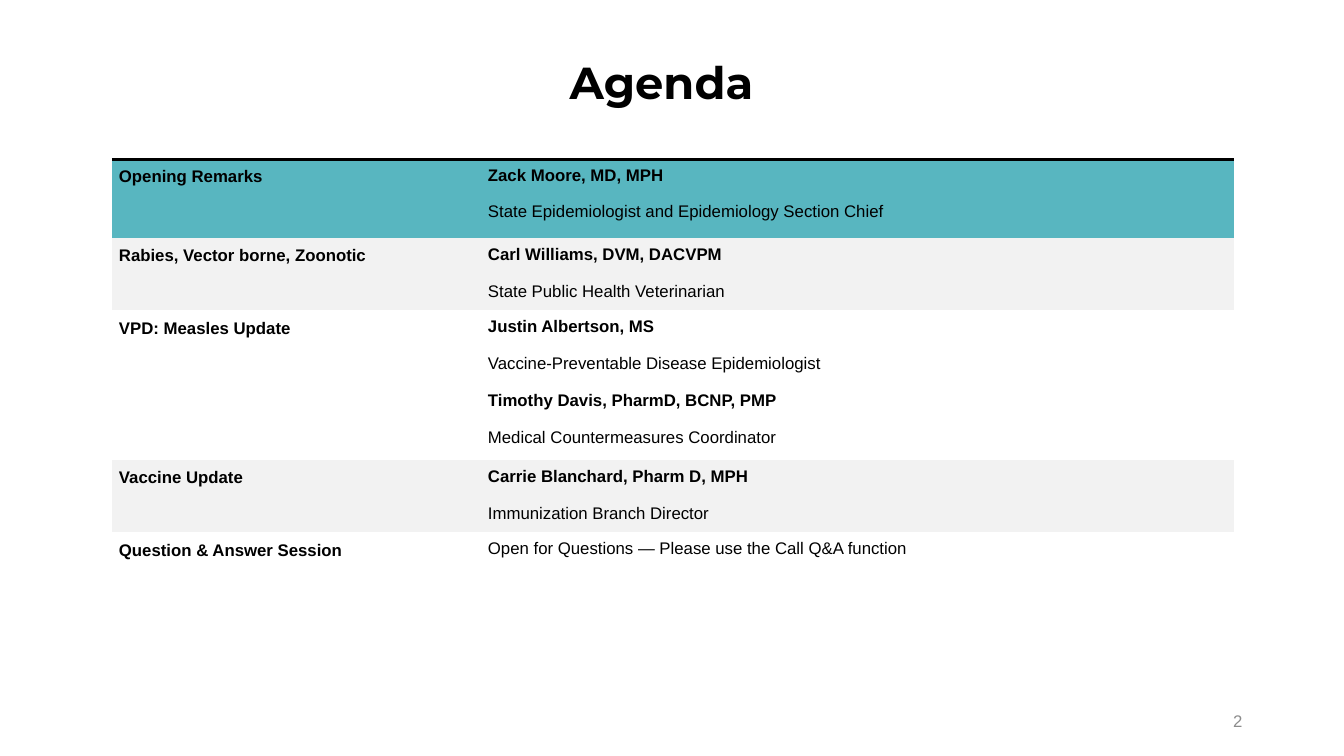
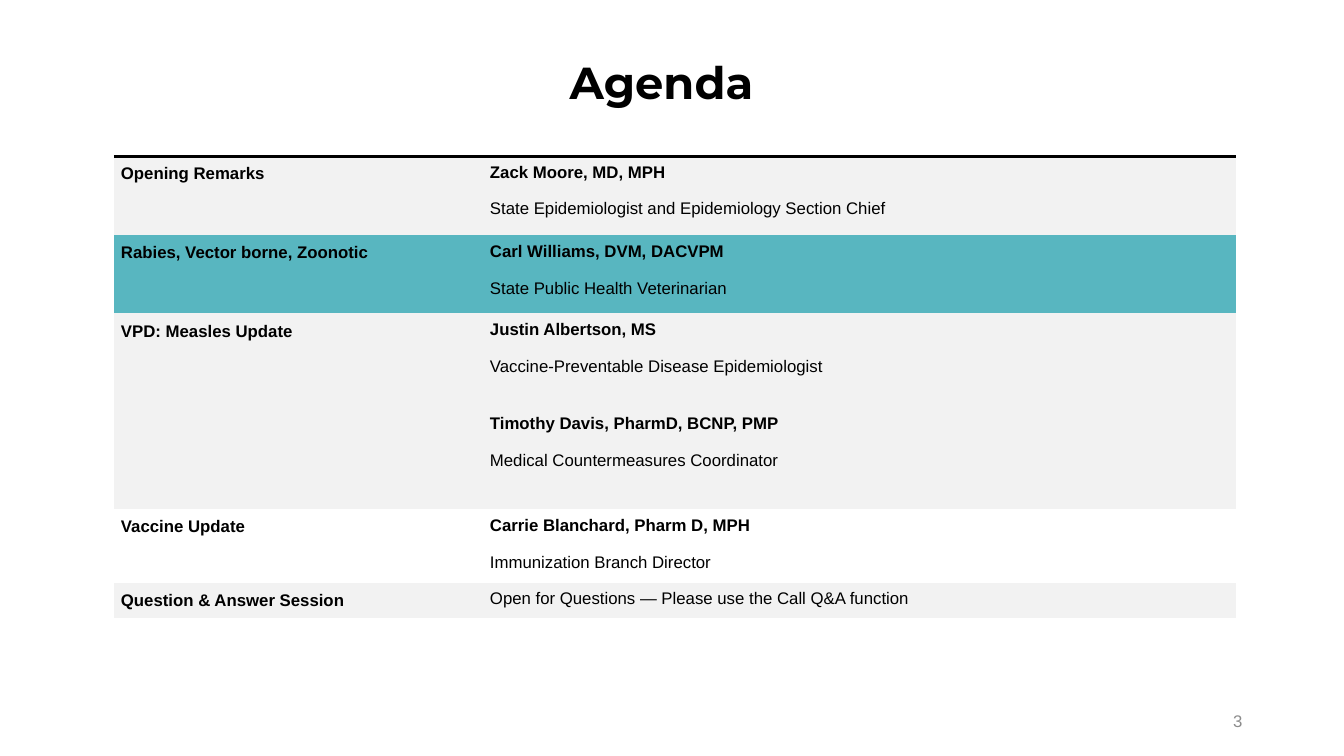
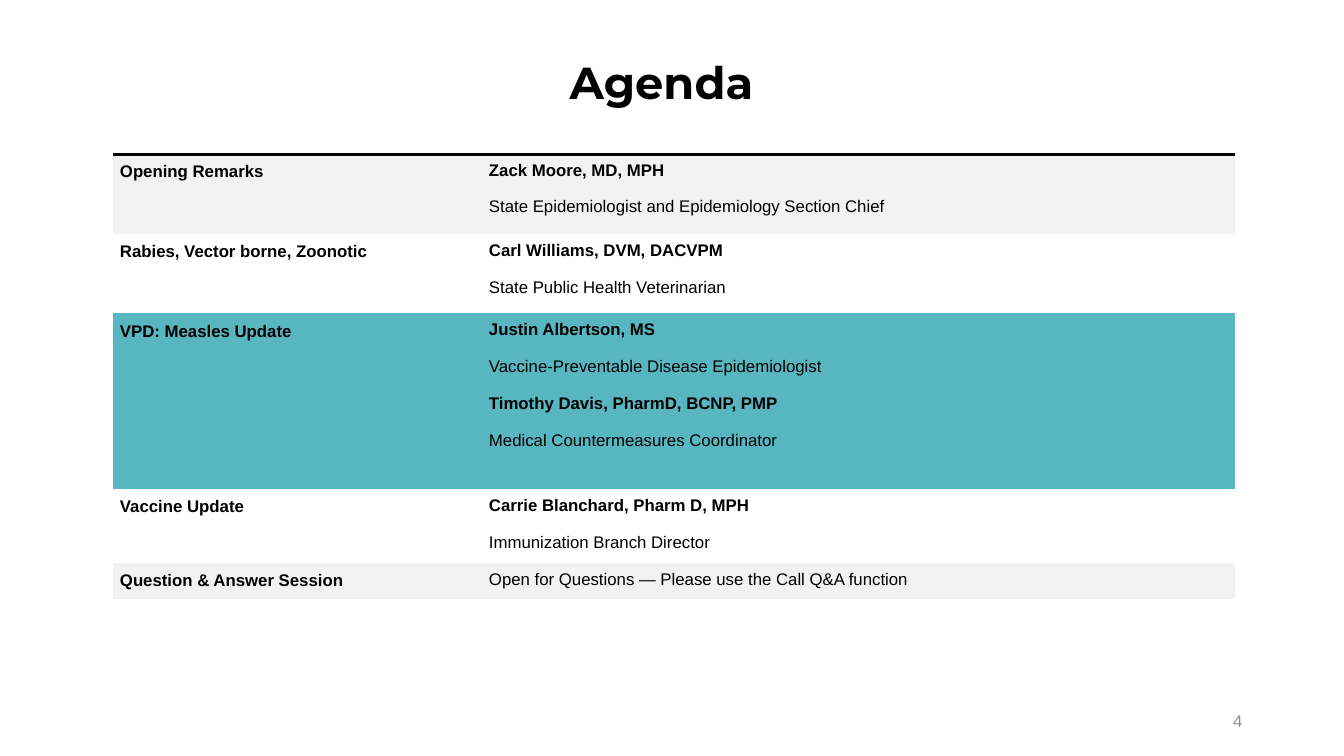
import pptx
import pptx.util
import pptx.dml.color
import pptx.enum.text
import pptx.oxml
import pptx.oxml.ns

Inches = pptx.util.Inches
Pt = pptx.util.Pt
ALIGN = pptx.enum.text.PP_ALIGN
ANCHOR = pptx.enum.text.MSO_ANCHOR

TOPICS = [
    ("Opening Remarks",
     ["Zack Moore, MD, MPH",
      "State Epidemiologist and Epidemiology Section Chief"]),
    ("Rabies, Vector borne, Zoonotic",
     ["Carl Williams, DVM, DACVPM", "State Public Health Veterinarian"]),
    ("VPD: Measles Update",
     ["Justin Albertson, MS", "Vaccine-Preventable Disease Epidemiologist",
      "Timothy Davis, PharmD, BCNP, PMP",
      "Medical Countermeasures Coordinator"]),
    ("Vaccine Update",
     ["Carrie Blanchard, Pharm D, MPH", "Immunization Branch Director"]),
    ("Question & Answer Session",
     ["Open for Questions — Please use the Call Q&A function"]),
]

PAGES = [
    (2, 1.11, 1.58, [0.78, 0.72, 1.45, 0.69, 0.4],
     ["teal", "grey", "white", "grey", "white"], 13),
    (3, 1.13, 1.55, [0.78, 0.78, 1.94, 0.73, 0.35],
     ["grey", "teal", "grey", "white", "grey"], 27),
    (4, 1.12, 1.53, [0.79, 0.79, 1.74, 0.74, 0.35],
     ["grey", "white", "teal", "white", "grey"], 13),
]


class Deck:
    """Holds the style and the current slide."""

    hues = {"black": "000000", "note": "8C8C8C", "teal": "58B6C0",
            "grey": "F2F2F2", "white": "FFFFFF"}
    plain = "{2D5ABB26-0587-4C30-8999-92F81FD0307C}"
    cols = [3.66, 7.47]

    def __init__(self):
        self.prs = pptx.Presentation()
        self.prs.slide_width = Inches(13.33)
        self.prs.slide_height = Inches(7.5)

    def hue(self, name):
        return pptx.dml.color.RGBColor.from_string(self.hues[name])

    def run(self, para, text, size=12, bold=False, hue="black", face="Arial"):
        run = para.add_run()
        run.text = text
        font = run.font
        font.size, font.bold, font.name = Pt(size), bold, face
        font.color.rgb = self.hue(hue)

    def page(self, title, number):
        self.slide = self.prs.slides.add_slide(self.prs.slide_layouts[5])
        head = self.slide.shapes.title
        head.left, head.top = Inches(5.55), Inches(0.49)
        head.width, head.height = Inches(2.04), Inches(0.64)
        frame = head.text_frame
        frame.word_wrap = False
        frame.auto_size = pptx.enum.text.MSO_AUTO_SIZE.SHAPE_TO_FIT_TEXT
        frame.vertical_anchor = ANCHOR.TOP
        para = frame.paragraphs[0]
        para.alignment = ALIGN.LEFT
        self.run(para, title, 32, True, face="Montserrat")
        self.footer(number)

    def footer(self, number):
        box = self.slide.shapes.add_textbox(
            Inches(9.42), Inches(6.95), Inches(3), Inches(0.4))
        frame = box.text_frame
        frame.word_wrap = True
        frame.vertical_anchor = ANCHOR.MIDDLE
        para = frame.paragraphs[0]
        para.alignment = ALIGN.RIGHT
        self.run(para, str(number), hue="note")

    def cell(self, cell, fill):
        cell.fill.solid()
        cell.fill.fore_color.rgb = self.hue(fill)
        cell.margin_left = cell.margin_right = Inches(0.07)
        cell.margin_top = cell.margin_bottom = Inches(0.07)
        return cell.text_frame

    def rule(self, cell):
        line = pptx.oxml.parse_xml(
            f'<a:lnT {pptx.oxml.ns.nsdecls("a")} w="{Pt(2.25)}"><a:solidFill>'
            f'<a:srgbClr val="{self.hues["black"]}"/></a:solidFill></a:lnT>')
        cell._tc.get_or_add_tcPr().insert(0, line)

    def agenda(self, left, top, highs, fills, split):
        table = self.slide.shapes.add_table(
            len(highs), len(self.cols), Inches(left), Inches(top),
            Inches(sum(self.cols)), Inches(sum(highs))).table
        table.first_row = table.horz_banding = False
        table._tbl.tblPr.find(pptx.oxml.ns.qn("a:tableStyleId")).text = self.plain
        for col, wide in zip(table.columns, self.cols):
            col.width = Inches(wide)
        for row, (topic, lines) in enumerate(TOPICS):
            table.rows[row].height = Inches(highs[row])
            para = self.cell(table.cell(row, 0), fills[row]).paragraphs[0]
            para.line_spacing = 1.07
            self.run(para, topic, bold=True)
            frame = self.cell(table.cell(row, 1), fills[row])
            for pos, line in enumerate(lines):
                para = frame.add_paragraph() if pos else frame.paragraphs[0]
                if pos:
                    gap = 12 if row == 0 else 13
                    para.space_before = Pt(split if pos == 2 else gap)
                self.run(para, line, bold=len(lines) > 1 and pos % 2 == 0)
        for cell in table.rows[0].cells:
            self.rule(cell)


def main():
    """Build the agenda slides."""
    deck = Deck()
    for number, *grid in PAGES:
        deck.page("Agenda", number)
        deck.agenda(*grid)
    deck.prs.save("out.pptx")


if __name__ == "__main__":
    main()
